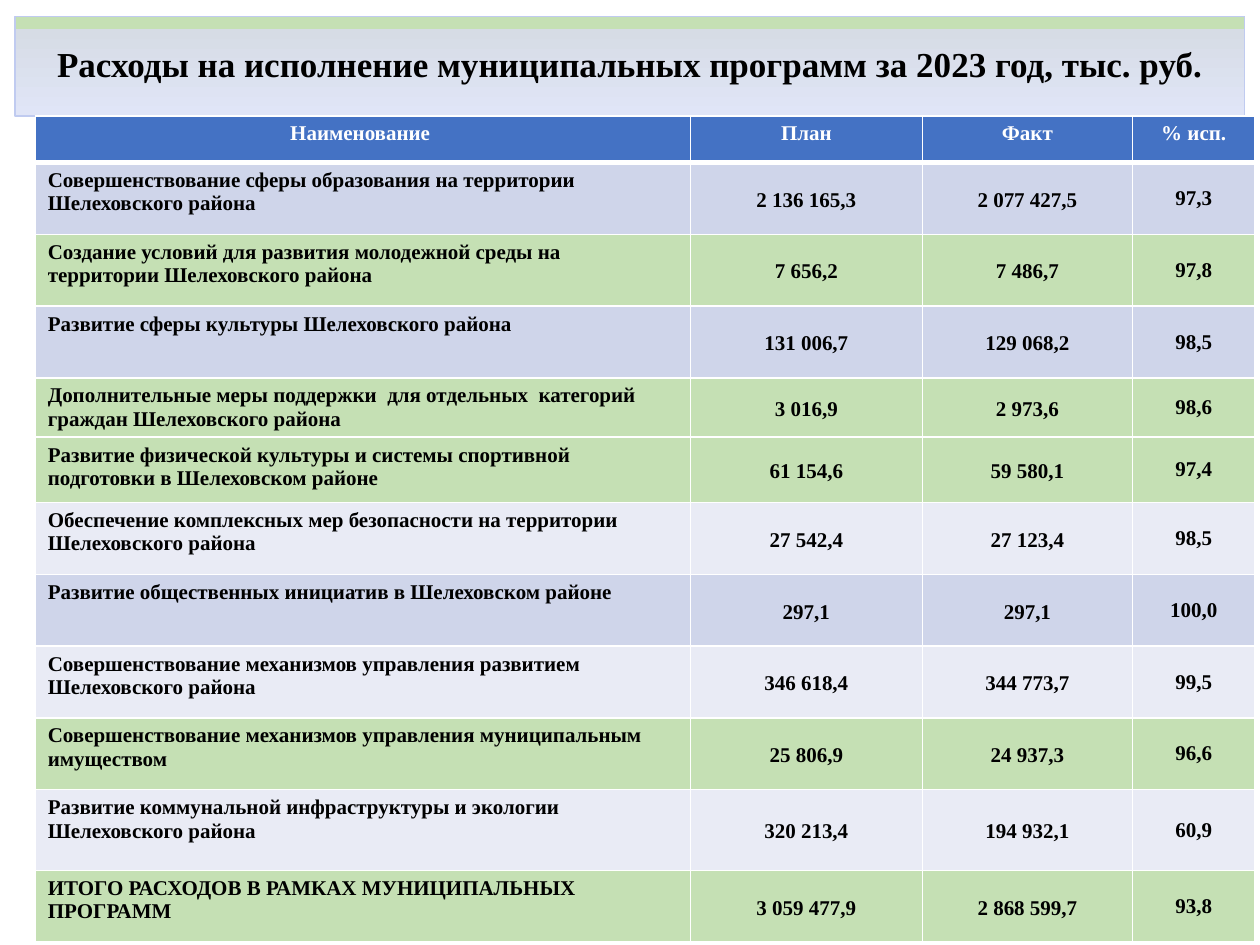
from copy import deepcopy
from lxml import etree
from pptx import Presentation
from pptx.dml.color import RGBColor
from pptx.enum.text import MSO_ANCHOR as Anchor, MSO_AUTO_SIZE as AutoSize, PP_ALIGN as Align
from pptx.oxml.ns import qn
from pptx.util import Inches, Pt

COLORS = {
    "black": "000000", "white": "FFFFFF", "header": "4472C4",
    "blue": "CFD5EA", "pale": "E9EBF5", "green": "C5E0B4",
    "title_mid": "D6DCE5", "title_end": "E0E5F7", "title_line": "C0CBF0",
}
FONT = "Times New Roman"
TITLE = "Расходы на исполнение муниципальных программ за 2023 год, тыс. руб."
TITLE_STOPS = [(0.13, "green"), (0.13, "title_mid"), (1, "title_end")]
HEADERS = ["Наименование ", "План", "Факт", "% исп."]
COLUMN_WIDTHS = [5.2, 1.84, 1.67, 0.97]
HEADER_HEIGHT = 0.37
PROGRAMS = [
    ("Совершенствование сферы образования на территории Шелеховского района",
     "2 136 165,3", "2 077 427,5", "97,3", "blue", 0.57),
    ("Создание условий для развития молодежной среды на территории Шелеховского района",
     "7 656,2", "7 486,7", "97,8", "green", 0.57),
    ("Развитие сферы культуры Шелеховского района",
     "131 006,7", "129 068,2", "98,5", "blue", 0.57),
    ("Дополнительные меры поддержки  для отдельных  категорий граждан Шелеховского района",
     "3 016,9", "2 973,6", "98,6", "green", 0.45),
    ("Развитие физической культуры и системы спортивной подготовки в Шелеховском районе",
     "61 154,6", "59 580,1", "97,4", "green", 0.52),
    ("Обеспечение комплексных мер безопасности на территории Шелеховского района",
     "27 542,4", "27 123,4", "98,5", "pale", 0.57),
    ("Развитие общественных инициатив в Шелеховском районе",
     "297,1", "297,1", "100,0", "blue", 0.57),
    ("Совершенствование механизмов управления развитием Шелеховского района",
     "346 618,4", "344 773,7", "99,5", "pale", 0.57),
    ("Совершенствование механизмов управления муниципальным имуществом",
     "25 806,9", "24 937,3", "96,6", "green", 0.57),
    ("Развитие коммунальной инфраструктуры и экологии Шелеховского района",
     "320 213,4", "194 932,1", "60,9", "pale", 0.64),
    ("ИТОГО РАСХОДОВ В РАМКАХ МУНИЦИПАЛЬНЫХ ПРОГРАММ",
     "3 059 477,9", "2 868 599,7", "93,8", "green", 0.57),
]


def rgb(name):
    return RGBColor.from_string(COLORS[name])


def style_text(paragraph, size, color, align):
    paragraph.alignment = align
    for run in paragraph.runs:
        run.font.name = FONT
        run.font.size = Pt(size)
        run.font.bold = True
        run.font.color.rgb = rgb(color)


def add_title(slide):
    title = slide.shapes.title
    title.left, title.top, title.width, title.height = map(Inches, (0.12, 0.13, 9.76, 0.79))
    title.fill.gradient()
    title.fill.gradient_angle = 270
    stop_list = next(title._element.iter(qn("a:gsLst")))
    stop_list.append(deepcopy(stop_list[-1]))
    for stop, (position, color) in zip(title.fill.gradient_stops, TITLE_STOPS):
        stop.position = position
        stop.color.rgb = rgb(color)
    title.line.color.rgb = rgb("title_line")
    title.line.width = Pt(0.75)
    frame = title.text_frame
    frame.text = TITLE
    frame.word_wrap = True
    frame.auto_size = AutoSize.NONE
    frame.vertical_anchor = Anchor.MIDDLE
    frame.paragraphs[0].line_spacing = 0.9
    style_text(frame.paragraphs[0], 20, "black", Align.CENTER)


def set_borders(cell, bottom_width):
    properties = cell._tc.get_or_add_tcPr()
    widths = {"a:lnL": 1, "a:lnR": 1, "a:lnT": 1, "a:lnB": bottom_width}
    for index, (tag, width) in enumerate(widths.items()):
        line = etree.Element(qn(tag), w=str(Pt(width)))
        fill = etree.SubElement(line, qn("a:solidFill"))
        etree.SubElement(fill, qn("a:srgbClr"), val=COLORS["white"])
        properties.insert(index, line)


def fill_cell(cell, text, fill, is_header, column):
    is_amount = not is_header and column in (1, 2)
    is_name = not is_header and column == 0
    cell.text_frame.text = text
    cell.fill.solid()
    cell.fill.fore_color.rgb = rgb(fill)
    cell.margin_left = cell.margin_right = Inches(0.07 if is_amount else 0.1)
    cell.margin_top = cell.margin_bottom = Inches(0 if is_amount else 0.05)
    cell.vertical_anchor = Anchor.TOP if is_header or is_name else Anchor.MIDDLE
    paragraph = cell.text_frame.paragraphs[0]
    if is_amount:
        paragraph.line_spacing = 1.15
        paragraph.space_after = Pt(10)
    style_text(paragraph, 12, "white" if is_header else "black",
               Align.LEFT if is_name else Align.CENTER)
    set_borders(cell, 3 if is_header else 1)


def add_program_table(slide):
    rows = [(*HEADERS, "header", HEADER_HEIGHT), *PROGRAMS]
    total_height = sum(row[-1] for row in rows)
    table = slide.shapes.add_table(
        len(rows), len(HEADERS), Inches(0.28), Inches(0.92),
        Inches(sum(COLUMN_WIDTHS)), Inches(total_height)).table
    for column, width in zip(table.columns, COLUMN_WIDTHS):
        column.width = Inches(width)
    for row_index, (*texts, fill, height) in enumerate(rows):
        table.rows[row_index].height = Inches(height)
        for column_index, text in enumerate(texts):
            fill_cell(table.cell(row_index, column_index), text, fill,
                      row_index == 0, column_index)


def main():
    presentation = Presentation()
    presentation.slide_width, presentation.slide_height = Inches(10), Inches(7.5)
    slide = presentation.slides.add_slide(presentation.slide_layouts[5])
    add_title(slide)
    add_program_table(slide)
    presentation.save("out.pptx")


if __name__ == "__main__":
    main()
